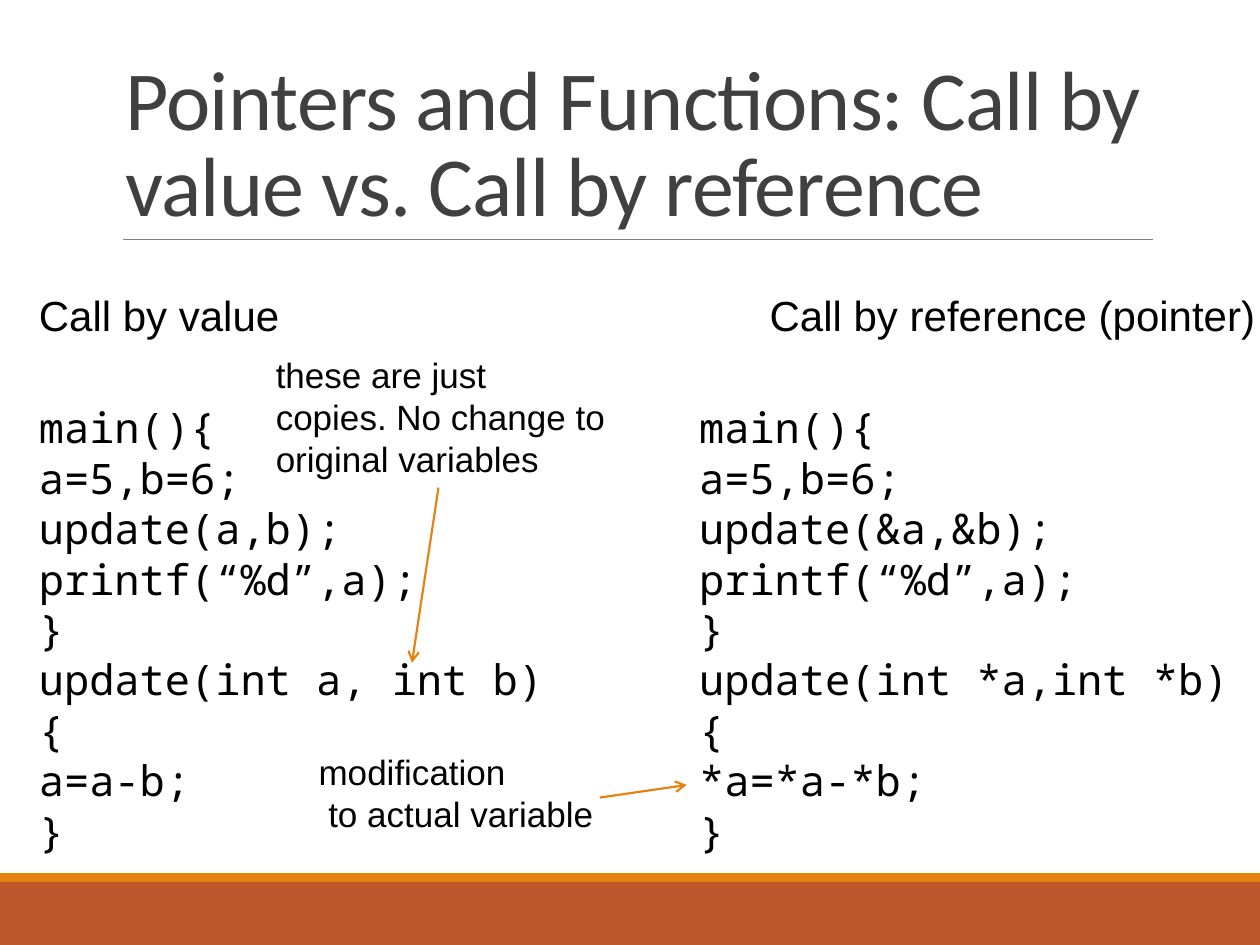
import dataclasses

import pptx
import pptx.dml.color
import pptx.enum.shapes
import pptx.enum.text
import pptx.oxml.ns
import pptx.util
from lxml import etree
from pptx.util import Inches

RGBColor = pptx.dml.color.RGBColor
BLACK = RGBColor(0x00, 0x00, 0x00)
TITLE_GREY = RGBColor(0x40, 0x40, 0x40)
RULE_GREY = RGBColor(0x80, 0x80, 0x80)
ORANGE = RGBColor(0xE4, 0x83, 0x12)
RUST = RGBColor(0xBD, 0x58, 0x2C)


@dataclasses.dataclass
class Label:
    text: str
    left: float
    top: float
    width: float
    height: float
    size: int
    font: str = "Arial"
    color: RGBColor = BLACK


@dataclasses.dataclass
class Line:
    start: tuple[float, float]
    end: tuple[float, float]
    color: RGBColor = ORANGE
    width: float = 1.25
    arrow: bool = True


@dataclasses.dataclass
class Example:
    heading: str
    heading_left: float
    code_left: float
    args: str
    params: str
    body: str


def add_label(s, label: Label):
    sp = s.shapes.add_textbox(Inches(label.left), Inches(label.top),
                              Inches(label.width), Inches(label.height))
    tf = sp.text_frame
    tf.word_wrap = True
    tf.text = label.text
    for p in tf.paragraphs:
        for r in p.runs:
            r.font.size = pptx.util.Pt(label.size)
            r.font.name = label.font
            r.font.color.rgb = label.color
    return sp


def add_line(s, line: Line) -> None:
    cx = s.shapes.add_connector(
        pptx.enum.shapes.MSO_CONNECTOR.STRAIGHT,
        *(Inches(v) for v in line.start + line.end))
    cx.line.color.rgb = line.color
    cx.line.width = pptx.util.Pt(line.width)
    qn = pptx.oxml.ns.qn
    if line.arrow:
        etree.SubElement(cx.line._get_or_add_ln(), qn("a:tailEnd"), type="arrow")
    etree.SubElement(cx._element.spPr, qn("a:effectLst"))


def add_band(s, top: float, height: float, color: RGBColor) -> None:
    sp = s.shapes.add_shape(pptx.enum.shapes.MSO_SHAPE.RECTANGLE,
                            0, Inches(top), Inches(10), Inches(height))
    sp.shadow.inherit = False
    sp.fill.solid()
    sp.fill.fore_color.rgb = color
    sp.line.fill.background()


def add_title(s, label: Label) -> None:
    tf = add_label(s, label).text_frame
    tf.vertical_anchor = pptx.enum.text.MSO_ANCHOR.BOTTOM
    p = tf.paragraphs[0]
    p.line_spacing = 0.85
    # Tighten the letters by half a point
    p.runs[0].font._element.set("spc", "-50")


def add_example(s, ex: Example) -> None:
    code = "\n".join([
        "main(){", "a=5,b=6;", f"update({ex.args});", "printf(“%d”,a);", "}",
        f"update({ex.params}) {{", ex.body, "}",
    ])
    add_label(s, Label(ex.heading, ex.heading_left, 2.25, 4.12, 0.5, 24))
    add_label(s, Label(code, ex.code_left, 3.14, 4.42, 3.74, 24, "Noto Sans Mono"))


EXAMPLES = [
    Example("Call by value", 0.21, 0.21, "a,b", "int a, int b", "a=a-b;"),
    Example("Call by reference (pointer)", 6.01, 5.45,
            "&a,&b", "int *a,int *b", "*a=*a-*b;"),
]
NOTES = [
    Label("these are just copies. No change to original variables",
          2.09, 2.76, 2.82, 1.11, 20),
    Label("modification\n to actual variable", 2.43, 5.91, 2.82, 0.77, 20),
]
ARROWS = [
    Line((3.48, 3.87), (3.27, 5.26)),
    Line((4.76, 6.33), (5.45, 6.23)),
]


def main() -> None:
    prs = pptx.Presentation()
    prs.slide_width, prs.slide_height = Inches(10), Inches(7.5)
    s = prs.slides.add_slide(prs.slide_layouts[6])

    # Footer bands and title rule
    add_band(s, 7, 0.5, RUST)
    add_band(s, 6.93, 0.07, ORANGE)
    add_line(s, Line((0.98, 1.9), (9.15, 1.9), RULE_GREY, 0.5, arrow=False))

    add_title(s, Label("Pointers and Functions: Call by value vs. Call by reference",
                       0.9, 0.31, 8.25, 1.59, 48, "Calibri", TITLE_GREY))

    # Code side by side
    for ex in EXAMPLES:
        add_example(s, ex)

    # Notes and their arrows
    for note in NOTES:
        add_label(s, note)
    for arrow in ARROWS:
        add_line(s, arrow)

    prs.save("out.pptx")


if __name__ == "__main__":
    main()
